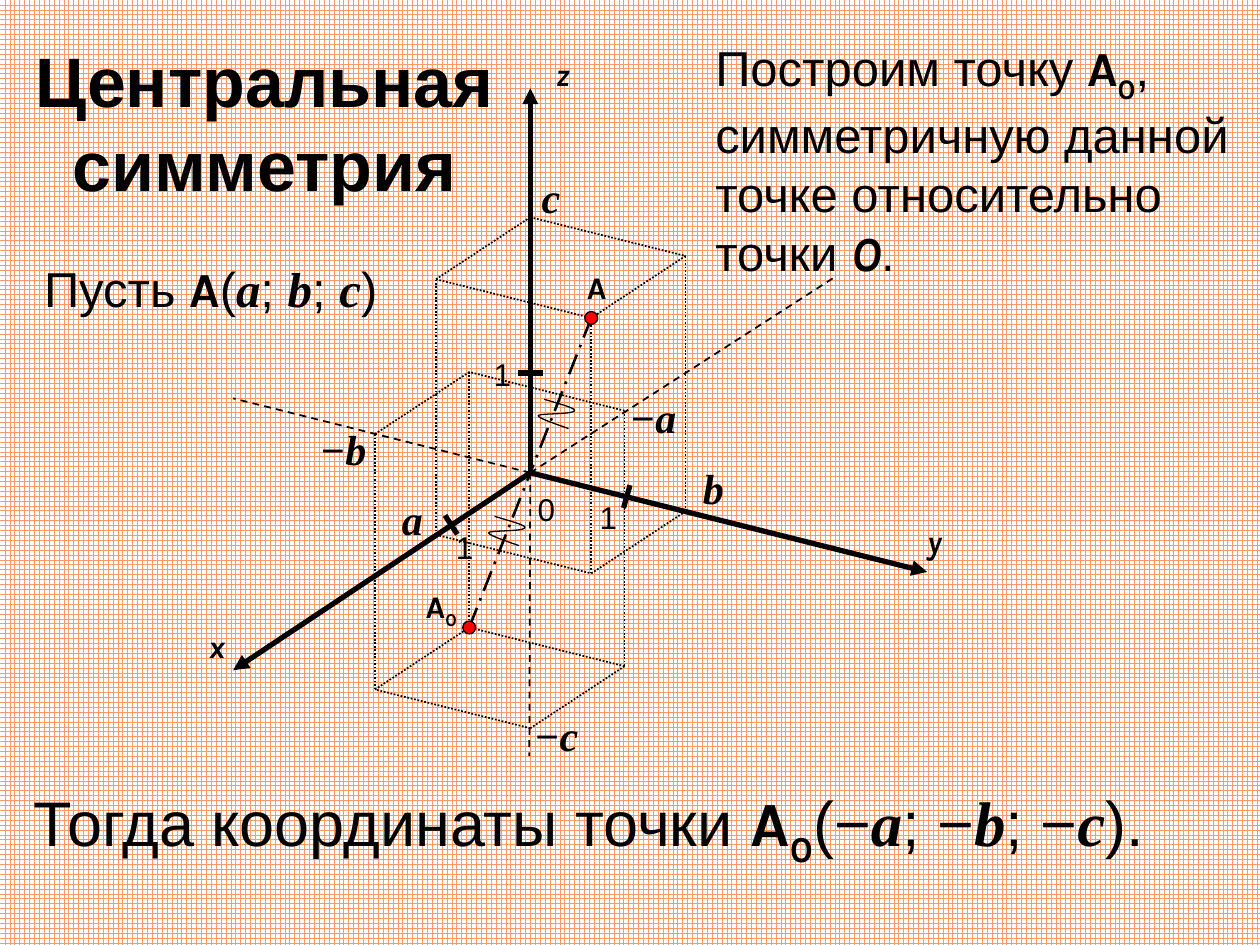
from itertools import combinations, product
from lxml import etree
from pptx import Presentation, util as u
from pptx.dml.color import RGBColor
from pptx.enum import dml, shapes, text
from pptx.oxml.ns import qn

HUE = {"ink": "000000", "dot": "FF0000", "grid": "FF9966", "paper": "FFFFFF"}
INK = RGBColor.from_string(HUE["ink"])
DASH = dml.MSO_LINE.DASH
# style: font, bold, italic
STYLE = {
    "text": ("Arial", False, False),
    "title": ("Arial", True, False),
    "point": ("Karla", True, False),
    "sub": ("Karla", True, False),
    "axis": ("Karla", True, True),
    "var": ("Times New Roman", True, True),
}

deck = Presentation()
deck.slide_width, deck.slide_height = u.Cm(25.4), u.Cm(19.05)
slide = deck.slides.add_slide(deck.slide_layouts[6])
back = slide.background.fill
back.patterned()
back.pattern = dml.MSO_PATTERN.LARGE_GRID
back.fore_color.rgb = RGBColor.from_string(HUE["grid"])
back.back_color.rgb = RGBColor.from_string(HUE["paper"])


def draw(start, end, width, dash=None, arrow=False):
    """Add a straight line between two points given in cm."""
    ends = [u.Cm(n) for n in (*start, *end)]
    line = slide.shapes.add_connector(shapes.MSO_CONNECTOR.STRAIGHT, *ends)
    line.line.width = u.Pt(width)
    line.line.color.rgb = INK
    if dash:
        line.line.dash_style = dash
    if arrow:
        etree.SubElement(line.line._get_or_add_ln(), qn("a:tailEnd"), type="triangle")
    etree.SubElement(line._element.spPr, qn("a:effectLst"))


def write(box, size, *runs, align=None):
    """Add a text box made of (style, words) runs."""
    frame = slide.shapes.add_textbox(*[u.Cm(n) for n in box]).text_frame
    frame.word_wrap = True
    frame.auto_size = text.MSO_AUTO_SIZE.SHAPE_TO_FIT_TEXT
    par = frame.paragraphs[0]
    par.alignment = align
    par.font.size = u.Pt(size)
    par.font.color.rgb = INK
    for style, words in runs:
        run = par.add_run()
        run.text = words
        font = par.font if len(runs) == 1 else run.font
        font.name, font.bold, font.italic = STYLE[style]
        if style == "sub":
            run._r.get_or_add_rPr().set("baseline", "-25000")


# Axes with their dashed negative halves
zero = (10.69, 9.53)
for tip in [(16.79, 5.61), (4.7, 8.03), (10.67, 15.24)]:
    draw(zero, tip, 1, DASH)
for tip in [(4.7, 13.51), (18.69, 11.53), (10.69, 1.78)]:
    draw(zero, tip, 3, arrow=True)

# Unit marks on z, y and x
draw((10.44, 7.52), (10.95, 7.52), 3)
draw((12.57, 10.24), (12.7, 9.78), 3)
draw((8.97, 10.39), (9.22, 10.77), 3)

# Two mirrored boxes spanned by a, b, c: every edge that misses the origin
span = [(-1.9, 1.25), (3.13, 0.78), (0, -5.15)]
dots = []
for sign in (1, -1):
    place = {
        key: tuple(zero[i] + sign * sum(k * v[i] for k, v in zip(key, span)) for i in (0, 1))
        for key in product((0, 1), repeat=3)
    }
    for one, two in combinations(place, 2):
        if any(one) and sum(m != n for m, n in zip(one, two)) == 1:
            draw(place[one], place[two], 1, dml.MSO_LINE.ROUND_DOT)
    dots.append(place[1, 1, 1])
    draw(place[1, 1, 1], zero, 1.5, dml.MSO_LINE.LONG_DASH_DOT)

# Points A and A0
side = 0.26
for x, y in dots:
    dot = slide.shapes.add_shape(
        shapes.MSO_SHAPE.OVAL, u.Cm(x - side / 2), u.Cm(y - side / 2), u.Cm(side), u.Cm(side))
    dot.shadow.inherit = False
    dot.fill.solid()
    dot.fill.fore_color.rgb = RGBColor.from_string(HUE["dot"])
    dot.line.color.rgb = INK
    dot.line.width = u.Pt(0.75)

# Wavy marks of equal length, three Bezier arcs each
wave = [(11.46, 8.64), (11.15, 8.53), (10.85, 8.43), (10.85, 8.38), (10.87, 8.33),
        (11.56, 8.36), (11.58, 8.28), (11.61, 8.23), (11.3, 8.15), (10.97, 8.05)]
steps = 12
for dx, dy in [(0, 0), (-1, 2.36)]:
    curve = []
    for i in (0, 3, 6):
        for t in [n / steps for n in range(steps + 1)]:
            part = ((1 - t) ** 3, 3 * t * (1 - t) ** 2, 3 * t * t * (1 - t), t ** 3)
            x, y = (sum(k * p[j] for k, p in zip(part, wave[i:i + 4])) for j in (0, 1))
            curve.append((u.Cm(x + dx), u.Cm(y + dy)))
    form = slide.shapes.build_freeform(*curve[0])
    form.add_line_segments(curve[1:], close=False)
    mark = form.convert_to_shape()
    mark.shadow.inherit = False
    mark.fill.background()
    mark.line.color.rgb = INK
    mark.line.width = u.Pt(0.75)

# Short labels
for x, y, wide, style, words in [
    (3.96, 12.52, 1.12, "axis", "x"),
    (18.44, 10.39, 1.12, "axis", "y"),
    (10.95, 0.99, 1.12, "axis", "z"),
    (10.59, 9.75, 0.89, "text", "0"),
    (11.84, 9.91, 1.12, "text", "1"),
    (9.7, 7.04, 1.12, "text", "1"),
    (8.94, 10.52, 1.12, "text", "1"),
    (11.58, 5.28, 0.89, "point", "A"),
    (7.85, 9.83, 0.99, "var", "a"),
    (13.92, 9.19, 0.99, "var", "b"),
    (10.67, 3.33, 0.99, "var", "c"),
    (12.45, 7.77, 1.5, "var", "−a"),
    (6.2, 8.41, 1.5, "var", "−b"),
    (10.52, 14.17, 1.63, "var", "−c"),
]:
    high, size = (1.27, 24) if style == "var" else (1.02, 18)
    write((x, y, wide, high), size, (style, words))

# Title and statements
image = [("point", "A"), ("sub", "0")]
write((8.33, 11.71, 1.24, 1.02), 18, *image)
write((0.64, 5.08, 7.42, 1.45), 28, ("text", "Пусть "), ("point", "A"), ("text", "("),
      ("var", "a"), ("text", "; "), ("var", "b"), ("text", "; "), ("var", "c"), ("text", ")"))
write((14.17, 0.64, 11.23, 5.05), 28, ("text", "Построим точку "), *image,
      ("text", ", симметричную данной точке относительно точки "), ("axis", "O"), ("text", "."))
write((0.43, 15.67, 24.56, 1.8), 36, ("text", "Тогда координаты точки "), *image,
      ("text", "(−"), ("var", "a"), ("text", "; −"), ("var", "b"), ("text", "; −"),
      ("var", "c"), ("text", ")."))
write((0.43, 0.64, 9.8, 3.68), 40, ("title", "Центральная симметрия"),
      align=text.PP_ALIGN.CENTER)

deck.save("out.pptx")
